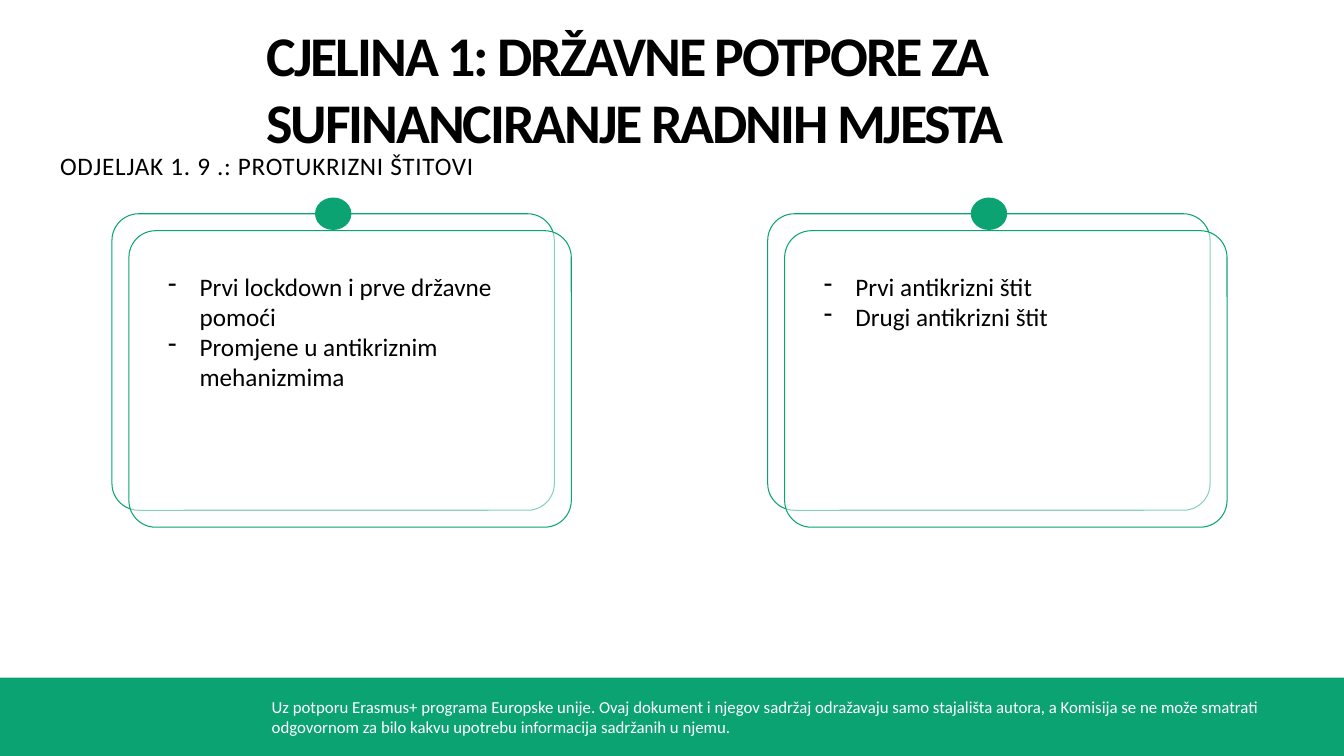
import pptx
import pptx.util
import pptx.dml.color
import pptx.enum.shapes
import pptx.enum.text
import pptx.oxml
import pptx.oxml.ns
from dataclasses import dataclass

# Content
TITLE = "CJELINA 1: DRŽAVNE POTPORE ZA SUFINANCIRANJE RADNIH MJESTA"
SECTION = "ODJELJAK 1. 9 .: PROTUKRIZNI ŠTITOVI"
CARDS = [
    ["Prvi lockdown i prve državne pomoći", "Promjene u antikriznim mehanizmima"],
    ["Prvi antikrizni štit", "Drugi antikrizni štit"],
]
FOOTER = (
    "Uz potporu Erasmus+ programa Europske unije. Ovaj dokument i njegov "
    "sadržaj odražavaju samo stajališta autora, a Komisija se ne može smatrati "
    "odgovornom za bilo kakvu upotrebu informacija sadržanih u njemu."
)


@dataclass(frozen=True)
class Theme:
    font: str = "Calibri"
    green: str = "0CA373"
    white: str = "FFFFFF"
    black: str = "000000"
    head: int = 40
    body: int = 18
    small: int = 12


THEME = Theme()
Pt = pptx.util.Pt
SHAPES = pptx.enum.shapes.MSO_SHAPE

# Layout in points
WIDE, HIGH = 960, 540
BAR_TOP = 484
CARD_LEFT, CARD_TOP, CARD_W, CARD_H = 80, 152.7, 316, 211.8
CARD_STEP = 468.4
SHIFT = 12.1
DOT_W, DOT_H = 26, 23.2
TEXT_X, TEXT_Y, TEXT_W = 33, 37.4, 250
INDENT = 22.5


def color(code):
    return pptx.dml.color.RGBColor.from_string(code)


def add_shape(slide, kind, box, fill, line=None, alpha=None):
    shape = slide.shapes.add_shape(kind, *map(Pt, box))
    shape.shadow.inherit = False
    shape.fill.solid()
    shape.fill.fore_color.rgb = color(fill)
    if alpha:
        tint = shape.fill._xPr.find(".//" + pptx.oxml.ns.qn("a:srgbClr"))
        tint.append(pptx.oxml.parse_xml(
            f'<a:alpha {pptx.oxml.ns.nsdecls("a")} val="{alpha * 1000}"/>'))
    if line:
        shape.line.color.rgb = color(line)
        shape.line.width = Pt(0.75)
    else:
        shape.line.fill.background()
    return shape


def set_text(shape, lines, size=THEME.body, tone=THEME.black, bold=False,
             track=0, dash=False, inset=None):
    frame = shape.text_frame
    frame.word_wrap = True
    frame.auto_size = pptx.enum.text.MSO_AUTO_SIZE.NONE
    frame.vertical_anchor = pptx.enum.text.MSO_ANCHOR.TOP
    if inset is not None:
        frame.margin_left = frame.margin_right = Pt(inset)
        frame.margin_top = frame.margin_bottom = Pt(inset)
    for i, line in enumerate(lines):
        para = frame.paragraphs[0] if i == 0 else frame.add_paragraph()
        para.alignment = pptx.enum.text.PP_ALIGN.LEFT
        if dash:
            props = para._p.get_or_add_pPr()
            props.set("marL", str(Pt(INDENT)))
            props.set("indent", str(-Pt(INDENT)))
            props.append(pptx.oxml.parse_xml(
                f'<a:buChar {pptx.oxml.ns.nsdecls("a")} char="-"/>'))
        run = para.add_run()
        run.text = line
        font = run.font
        font.name, font.size, font.bold = THEME.font, Pt(size), bold
        font.color.rgb = color(tone)
        if track:
            run._r.get_or_add_rPr().set("spc", str(int(track * 100)))


def add_text(slide, box, lines, **style):
    set_text(slide.shapes.add_textbox(*map(Pt, box)), lines, **style)


def add_card(slide, left, points):
    # Two offset frames with a dot on the top edge
    for move in (0, SHIFT):
        box = (left + move, CARD_TOP + move, CARD_W, CARD_H)
        frame = add_shape(slide, SHAPES.ROUNDED_RECTANGLE, box, THEME.white,
                          line=THEME.green, alpha=50)
        frame.adjustments[0] = 0.09
    dot = (left + (CARD_W - DOT_W) / 2, CARD_TOP - DOT_H / 2, DOT_W, DOT_H)
    add_shape(slide, SHAPES.OVAL, dot, THEME.green)
    add_text(slide, (left + TEXT_X, CARD_TOP + TEXT_Y, TEXT_W, 117), points,
             dash=True)


def main():
    deck = pptx.Presentation()
    deck.slide_width, deck.slide_height = Pt(WIDE), Pt(HIGH)
    slide = deck.slides.add_slide(deck.slide_layouts[5])

    # Footer band
    add_shape(slide, SHAPES.RECTANGLE, (0, BAR_TOP, WIDE, HIGH - BAR_TOP),
              THEME.green)
    add_text(slide, (187, 494, 750, 36), [FOOTER], size=THEME.small,
             tone=THEME.white)

    # Cards
    for i, points in enumerate(CARDS):
        add_card(slide, CARD_LEFT + i * CARD_STEP, points)

    # Title and section
    title = slide.shapes.title
    title.left, title.top, title.width, title.height = map(
        Pt, (190.4, 14.5, 646.6, 98))
    set_text(title, [TITLE], size=THEME.head, bold=True, track=-1.5, inset=0)
    add_text(slide, (35.8, 104, 480, 29), [SECTION], track=0.5)

    deck.save("out.pptx")


if __name__ == "__main__":
    main()
